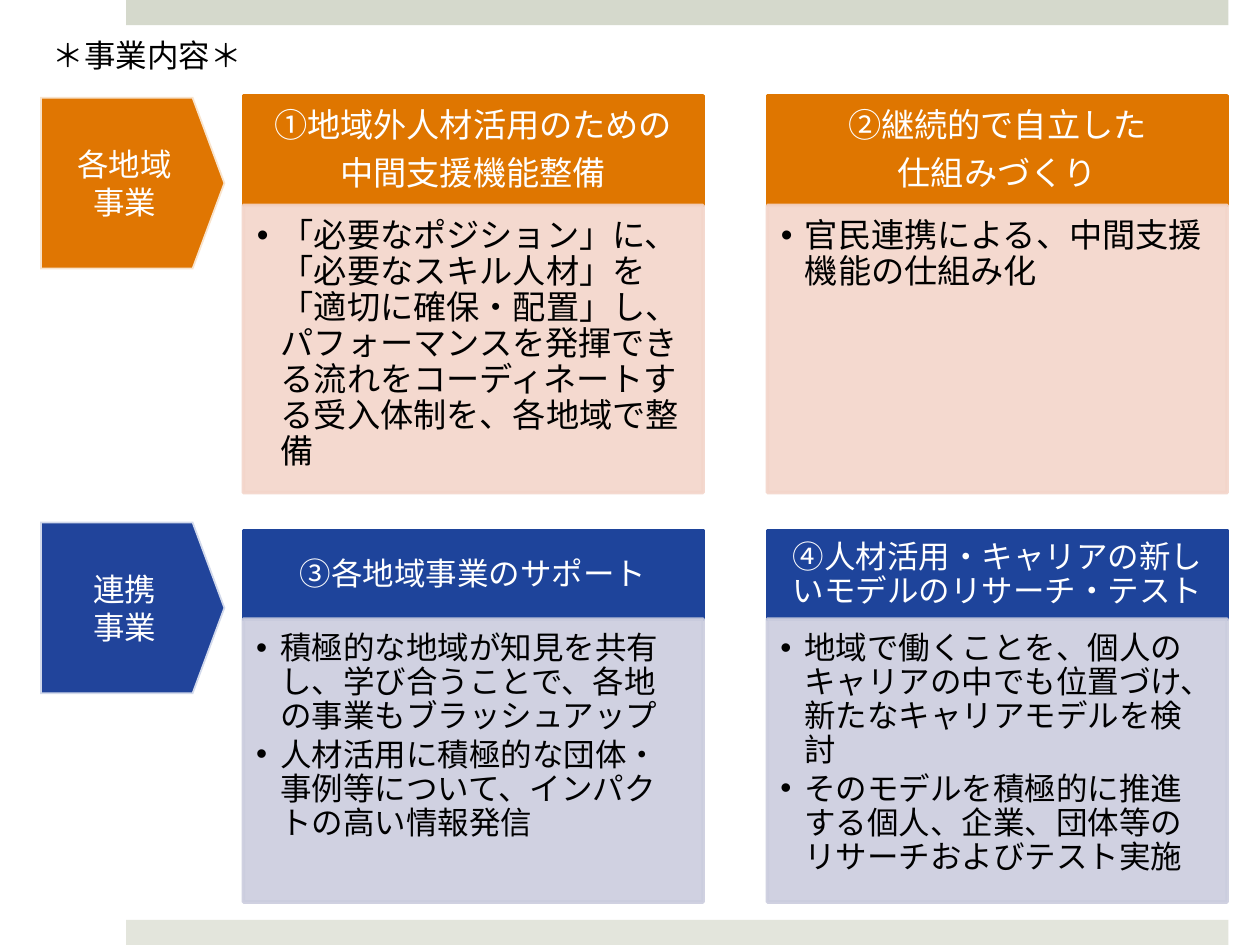
import pptx
import pptx.util
import pptx.dml.color
import pptx.enum.shapes
import pptx.enum.text
import pptx.oxml.ns
import lxml.etree

Pt = pptx.util.Pt
RGB = pptx.dml.color.RGBColor
Kind = pptx.enum.shapes.MSO_SHAPE
Align = pptx.enum.text.PP_ALIGN
Anchor = pptx.enum.text.MSO_ANCHOR
qn = pptx.oxml.ns.qn

FONT = "TeX Gyre Adventor"
WHITE = RGB(0xFF, 0xFF, 0xFF)
BLACK = RGB(0x00, 0x00, 0x00)
SAGE = RGB(0xD5, 0xD9, 0xCC)
MIST = RGB(0xE3, 0xE5, 0xDC)
ORANGE = RGB(0xDF, 0x76, 0x00)
AMBER = RGB(0xE0, 0x76, 0x02)
PEACH = RGB(0xF3, 0xD5, 0xCA)
BLUE = RGB(0x1E, 0x44, 0x9B)
NAVY = RGB(0x21, 0x44, 0x9B)
LILAC = RGB(0xCB, 0xCD, 0xDE)

COLS = (139, 438.5)
WIDTH = 262.8


def fade(fill, color, pct=100):
    """Fill with a solid colour at the given opacity."""
    fill.solid()
    fill.fore_color.rgb = color
    if pct < 100:
        node = fill._xPr.find(qn("a:solidFill"))[0]
        lxml.etree.SubElement(node, qn("a:alpha"), val=str(pct * 1000))


class Deck:
    def __init__(self, font):
        self.font = font
        self.prs = pptx.Presentation()
        self.prs.slide_width, self.prs.slide_height = Pt(720), Pt(540)
        self.slide = self.prs.slides.add_slide(self.prs.slide_layouts[6])

    def shape(self, kind, box, color, line=None, pct=100, edge=100):
        shp = self.slide.shapes.add_shape(kind, *map(Pt, box))
        shp.shadow.inherit = False
        fade(shp.fill, color, pct)
        if line is None:
            shp.line.fill.background()
        else:
            shp.line.width = Pt(2)
            fade(shp.line.fill, line, edge)
        return shp

    def label(self, shp, lines, size, color, pads, align=Align.CENTER,
              anchor=Anchor.MIDDLE, lead=0.9, gap=0, dots=False):
        """Put one paragraph per line, with pads as left, top, right, bottom."""
        frame = shp.text_frame
        frame.word_wrap = True
        frame.vertical_anchor = anchor
        (frame.margin_left, frame.margin_top,
         frame.margin_right, frame.margin_bottom) = map(Pt, pads)
        for i, line in enumerate(lines):
            para = frame.add_paragraph() if i else frame.paragraphs[0]
            para.alignment = align
            para.line_spacing = lead
            para.space_before = Pt(gap if i else 0)
            if dots:
                self.dot(para)
            run = para.add_run()
            run.text = line
            run.font.name = self.font
            run.font.size = Pt(size)
            run.font.color.rgb = color
            lxml.etree.SubElement(run.font._element, qn("a:ea"),
                                  typeface=self.font)

    def dot(self, para):
        para.level = 1
        props = para._p.get_or_add_pPr()
        props.set("marL", str(Pt(13.7)))
        props.set("indent", str(-Pt(13.7)))
        tint = lxml.etree.SubElement(props, qn("a:buClr"))
        lxml.etree.SubElement(tint, qn("a:srgbClr"), val=str(BLACK))
        lxml.etree.SubElement(props, qn("a:buFont"), typeface="Arial")
        lxml.etree.SubElement(props, qn("a:buChar"), char="•")

    def title(self, text, box):
        shp = self.slide.shapes.add_textbox(*map(Pt, box))
        self.label(shp, [text], 18, BLACK, (7.2, 3.6, 7.2, 3.6),
                   Align.LEFT, Anchor.TOP, 1)
        shp.text_frame.word_wrap = False

    def card(self, left, row, head, items):
        top, mid, end, size, dark, pale = row
        pad = size * 0.56
        cap = self.shape(Kind.RECTANGLE, (left, top, WIDTH, mid - top),
                         dark, dark)
        self.label(cap, head, size, WHITE, (pad, 5.8, pad, 5.8), gap=6.7)
        body = self.shape(Kind.RECTANGLE, (left, mid, WIDTH, end - mid),
                          pale, pale, 90, 90)
        self.label(body, items, size, BLACK,
                   (pad * 0.73, pad * 0.73, pad, pad * 1.14),
                   Align.LEFT, Anchor.TOP, gap=2.7, dots=True)

    def arrow(self, top, lines, color):
        shp = self.shape(Kind.PENTAGON, (23, top, 105.8, 98.6),
                         color, WHITE, edge=80)
        shp.adjustments[0] = 0.186
        self.label(shp, lines, 18, WHITE, (7.2, 3.6, 7.2, 3.6), lead=1)


# top, divide, bottom, text size, dark and pale colours
LOCAL = (54.7, 117.4, 281.5, 19, ORANGE, PEACH)
JOINT = (303.1, 353.8, 515.5, 18, BLUE, LILAC)

CARDS = (
    (LOCAL, (
        (["①地域外人材活用のための", "中間支援機能整備"],
         ["「必要なポジション」に、「必要なスキル人材」を「適切に確保・配置」し、"
          "パフォーマンスを発揮できる流れをコーディネートする受入体制を、各地域で整備"]),
        (["②継続的で自立した", "仕組みづくり"],
         ["官民連携による、中間支援機能の仕組み化"]),
    )),
    (JOINT, (
        (["③各地域事業のサポート"],
         ["積極的な地域が知見を共有し、学び合うことで、各地の事業もブラッシュアップ",
          "人材活用に積極的な団体・事例等について、インパクトの高い情報発信"]),
        (["④人材活用・キャリアの新しいモデルのリサーチ・テスト"],
         ["地域で働くことを、個人のキャリアの中でも位置づけ、新たなキャリアモデルを検討",
          "そのモデルを積極的に推進する個人、企業、団体等のリサーチおよびテスト実施"]),
    )),
)


def main():
    deck = Deck(FONT)
    for top, color in ((0, SAGE), (525.6, MIST)):
        deck.shape(Kind.RECTANGLE, (72, top, 630, 14.4), color)
    deck.title("＊事業内容＊", (23, 17.3, 123.8, 28.8))
    for row, cards in CARDS:
        for left, (head, items) in zip(COLS, cards):
            deck.card(left, row, head, items)
    deck.arrow(55.4, ["各地域", "事業"], AMBER)
    deck.arrow(298.1, ["連携", "事業"], NAVY)
    deck.prs.save("out.pptx")


if __name__ == "__main__":
    main()
